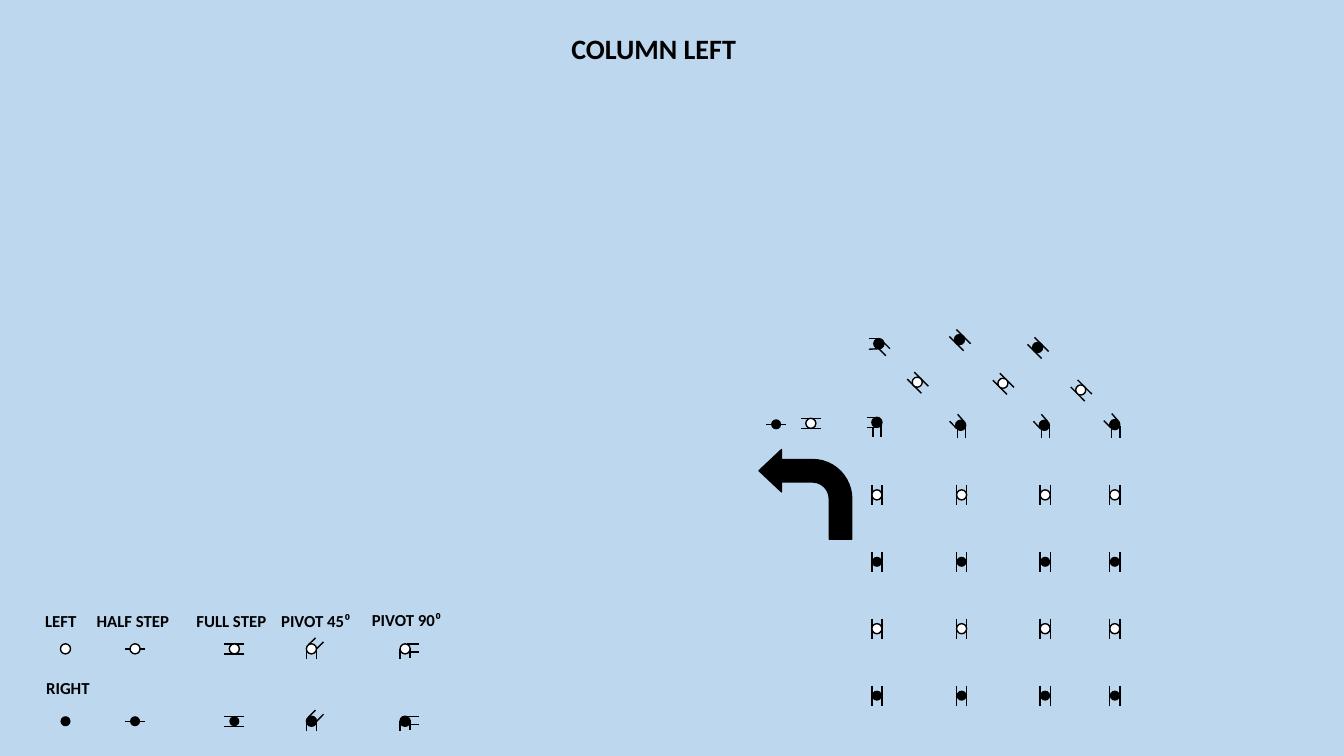
"""Draw the column left drill diagram with its footstep legend."""
from lxml.etree import SubElement
from pptx import Presentation
from pptx.dml.color import RGBColor
from pptx.enum.shapes import MSO_CONNECTOR, MSO_SHAPE
from pptx.enum.text import MSO_AUTO_SIZE
from pptx.oxml.ns import qn
from pptx.util import Pt

COLORS = {"background": "BDD7EE", "right": "000000", "left": "FFFFFF", "ink": "000000"}
DOT = 7.2
STEPS = {
    "stand": [],
    "half": [(7.2, 0, -7.2, 0)],
    "across": [(7.2, y, -7.2, y) for y in (-3.6, 3.6)],
    "forward": [(x, -7.2, x, 7.2) for x in (-3.6, 3.6)],
    "diagonal": [(7.9, 2.9, -2.2, -7.2), (2.9, 7.9, -7.2, -2.2)],
    "right 45": [(-3.6, 0, -3.6, 7.2), (3.6, 0, 3.6, 7.2),
                 (8.6, -5, 3.6, 0), (2.9, -7.9, -2.2, -2.9)],
    "right 90": [(-3.6, 0, -3.6, 7.2), (3.6, -0.7, 3.6, 6.5),
                 (2.9, 2.2, 10.1, 2.2), (1.4, -3.6, 10.1, -3.6)],
    "left 45": [(2.2, -2.9, -2.2, -7.9), (-2.9, 2.2, -7.9, -2.9),
                (-2.2, 9.4, -2.2, 2.2), (3.6, 9.4, 3.6, 0.7)],
    "left 90": [(0, -3.6, -7.2, -3.6), (0, 3.6, -7.2, 3.6),
                (-2.9, 3.6, -2.9, 10.8), (2.9, 2.2, 2.9, 10.8)],
    "finish 45": [(0, -3.6, -7.2, -3.6), (0, 3.6, -7.2, 4),
                  (5, 8.6, 0, 3.6), (7.9, 3.6, 2.9, -1.4)],
}
PLAIN_STEPS = ("stand", "half", "across", "forward")
LABELS = [
    ("LEFT", 25.2, 432.7, 43.2), ("RIGHT", 25.9, 480.2, 47),
    ("HALF STEP", 61.9, 432.7, 68.4), ("FULL STEP", 133.2, 432.4, 68.4),
    ("PIVOT 45⁰", 193.7, 432.7, 68.4), ("PIVOT 90⁰", 258.5, 432, 68.4),
]
LEGEND = [("stand", 46.8), ("half", 96.5), ("across", 167.4),
          ("right 45", 222.5), ("right 90", 289.4)]
LEGEND_ROWS = [("left", 463.5), ("right", 515.2)]
FILES = [626.4, 686.9, 746.6, 796.3]
FIRST_RANK, RANK_GAP = 353.5, 47.8
TURN = [
    ("left 90", "right", 626.4, 301.7), ("left 45", "right", 686.2, 303.8),
    ("left 45", "right", 746, 303.8), ("left 45", "right", 796.3, 303.3),
    ("finish 45", "right", 627.8, 245.5), ("diagonal", "right", 685.4, 242.6),
    ("diagonal", "right", 741.2, 248.2), ("diagonal", "left", 655.2, 273),
    ("diagonal", "left", 716.4, 273.8), ("diagonal", "left", 772, 278.6),
    ("half", "right", 554.4, 303.1), ("across", "left", 579.2, 302.4),
]


class DrillSlide:
    """Hold the style and the current slide."""

    def __init__(self, slide):
        self.slide = slide
        self.font = "Calibri"
        fill = slide.background.fill
        fill.solid()
        fill.fore_color.rgb = self.color("background")

    def color(self, name):
        return RGBColor.from_string(COLORS[name])

    def text(self, words, left, top, width, height=21.8, size=12):
        shape = self.slide.shapes.add_textbox(Pt(left), Pt(top), Pt(width), Pt(height))
        frame = shape.text_frame
        frame.word_wrap = True
        frame.auto_size = MSO_AUTO_SIZE.SHAPE_TO_FIT_TEXT
        frame.text = words
        font = frame.paragraphs[0].runs[0].font
        font.name, font.size, font.bold = self.font, Pt(size), True
        font.color.rgb = self.color("ink")

    def paint(self, shape, fill, outlined=True):
        shape.shadow.inherit = False
        shape.fill.solid()
        shape.fill.fore_color.rgb = self.color(fill)
        if outlined:
            shape.line.color.rgb = self.color("ink")
            shape.line.width = Pt(1)
        else:
            shape.line.fill.background()

    def stroke(self, shapes, *ends):
        connector = shapes.add_connector(MSO_CONNECTOR.STRAIGHT, *map(Pt, ends))
        connector.line.color.rgb = self.color("ink")
        connector.line.width = Pt(1)
        SubElement(connector._element.spPr, qn("a:effectLst"))

    def footstep(self, step, foot, x, y):
        strokes = STEPS[step]
        shapes = self.slide.shapes
        if strokes:
            shapes = shapes.add_group_shape().shapes
        for x1, y1, x2, y2 in strokes:
            self.stroke(shapes, x + x1, y + y1, x + x2, y + y2)
        dot = shapes.add_shape(MSO_SHAPE.OVAL, Pt(x - DOT / 2), Pt(y - DOT / 2), Pt(DOT), Pt(DOT))
        self.paint(dot, foot, foot == "left" or step not in PLAIN_STEPS)

    def turn_arrow(self, left, top, width, height):
        arrow = self.slide.shapes.add_shape(
            MSO_SHAPE.BENT_ARROW, Pt(left), Pt(top), Pt(width), Pt(height))
        for index, value in enumerate((0.25, 0.236, 0.25, 0.438)):
            arrow.adjustments[index] = value
        arrow._element.spPr.xfrm.set("flipH", "1")
        self.paint(arrow, "ink")


def main():
    presentation = Presentation()
    presentation.slide_width, presentation.slide_height = Pt(960), Pt(540)
    drill = DrillSlide(presentation.slides.add_slide(presentation.slide_layouts[6]))
    for label in LABELS:
        drill.text(*label)
    for foot, y in LEGEND_ROWS:
        for step, x in LEGEND:
            drill.footstep(step, foot, x, y)
    for rank, foot in enumerate(("left", "right") * 2):
        for x in FILES:
            drill.footstep("forward", foot, x, FIRST_RANK + rank * RANK_GAP)
    for footstep in TURN:
        drill.footstep(*footstep)
    drill.text("COLUMN LEFT", 401, 18.7, 167.8, 31.5, 20)
    drill.turn_arrow(542.2, 321.1, 66.2, 64.1)
    presentation.save("out.pptx")


if __name__ == "__main__":
    main()
